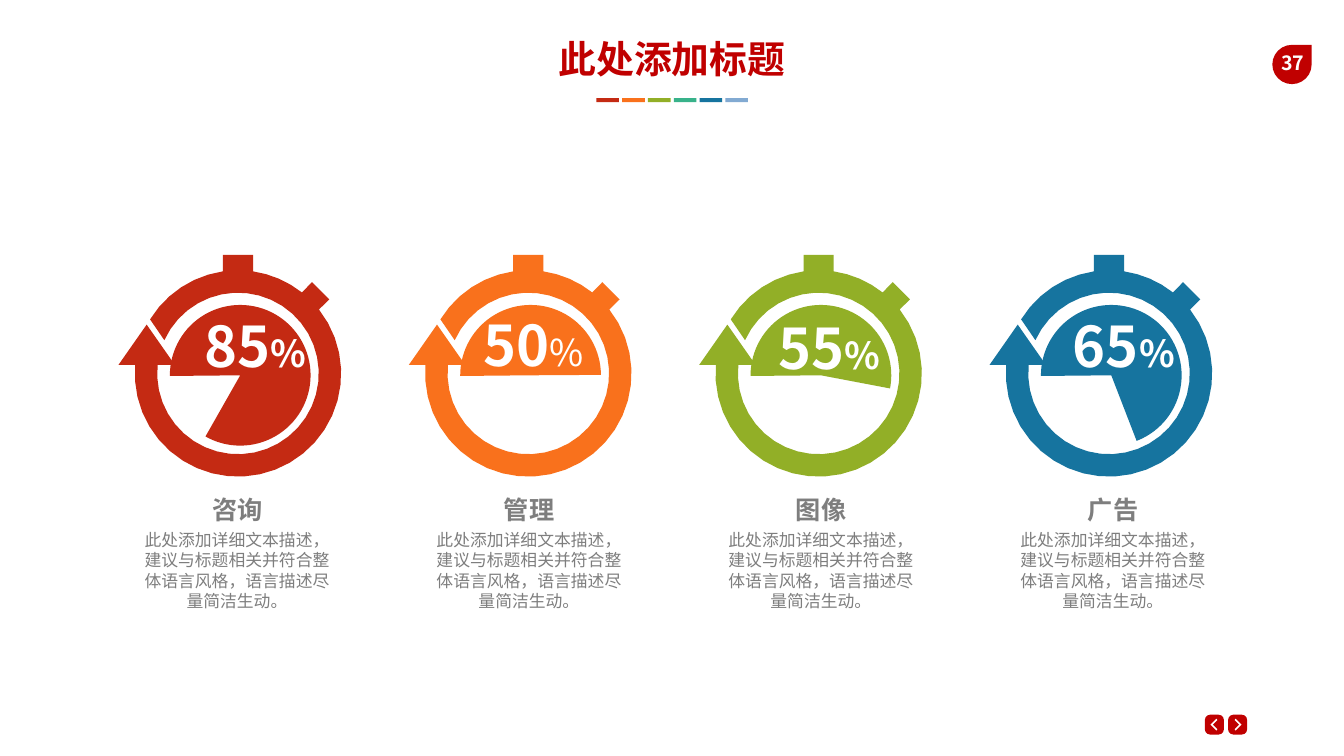
"""Build a slide of four stopwatch dials with percentages and captions."""
from dataclasses import dataclass
from math import ceil, cos, radians, sin

from pptx import Presentation
from pptx.dml.color import RGBColor
from pptx.enum.shapes import MSO_SHAPE
from pptx.enum.text import MSO_ANCHOR, PP_ALIGN
from pptx.util import Cm, Pt


@dataclass(frozen=True)
class Theme:
    """Colours, font and type sizes of the slide."""

    font: str = "Noto Sans CJK SC"
    accent: str = "C00000"
    white: str = "FFFFFF"
    grey: str = "7E7E7E"
    red: str = "C42A13"
    orange: str = "F9711C"
    green: str = "92AF27"
    teal: str = "38B28A"
    blue: str = "16749F"
    light_blue: str = "82AAD2"
    title: int = 54
    page_number: int = 28
    value: int = 80
    percent: int = 53
    heading: int = 36
    body: int = 24
    line_height: float = 1.21


THEME = Theme()
BODY = "此处添加详细文本描述，建议与标题相关并符合整体语言风格，语言描述尽量简洁生动。"
DIALS = [
    ("咨询", "85", THEME.red, 119.58, (0.90, 0), True),
    ("管理", "50", THEME.orange, 359.66, (0.27, -0.05), False),
    ("图像", "55", THEME.green, 10.78, (0.52, 0.10), True),
    ("广告", "65", THEME.blue, 68.86, (0.75, 0), True),
]
DIAL_X, DIAL_Y, DIAL_STEP = 11.99, 18.82, 14.63
CAPTION_STEP = 14.71
OUTER_RADIUS, INNER_RADIUS = 5.2, 4.07
ARC_STEP = 9
WIDE_INSETS = (0.51, 0.25)


def apply_format(target, values):
    """Set each named attribute on the target."""
    for name, value in values.items():
        setattr(target, name, value)


def paint(shape, color):
    """Give a shape a plain fill without line or shadow."""
    shape.shadow.inherit = False
    shape.fill.solid()
    shape.fill.fore_color.rgb = RGBColor.from_string(color)
    shape.line.fill.background()


def add_preset(slide, kind, box, color):
    """Add a filled preset shape."""
    shape = slide.shapes.add_shape(kind, *map(Cm, box))
    paint(shape, color)
    return shape


def add_outline(slide, center, points, color):
    """Add a filled closed outline around a center."""
    corners = [(Cm(center[0] + x), Cm(center[1] + y)) for x, y in points]
    builder = slide.shapes.build_freeform(*corners[0])
    builder.add_line_segments(corners[1:], close=True)
    paint(builder.convert_to_shape(), color)


def add_text(slide, box, runs, color, insets=(0.25, 0.13), frame_format=None,
             paragraph_format=None):
    """Add a centred paragraph from (text, size, bold) runs."""
    frame = slide.shapes.add_textbox(*map(Cm, box)).text_frame
    side, edge = map(Cm, insets)
    apply_format(frame, {
        "word_wrap": True, "margin_left": side, "margin_right": side,
        "margin_top": edge, "margin_bottom": edge, **(frame_format or {}),
    })
    paragraph = frame.paragraphs[0]
    apply_format(paragraph, {"alignment": PP_ALIGN.CENTER, **(paragraph_format or {})})
    for text, size, bold in runs:
        run = paragraph.add_run()
        run.text = text
        apply_format(run.font, {"name": THEME.font, "size": Pt(size), "bold": bold})
        run.font.color.rgb = RGBColor.from_string(color)


def add_label(slide, box, text, size, color, bold=True, wrap=True, insets=WIDE_INSETS):
    """Add a text of one style with tight line spacing."""
    add_text(slide, box, [(text, size, bold)], color, insets, {"word_wrap": wrap},
             {"line_spacing": Pt(size * THEME.line_height)})


def arc(radius, start, end):
    """Return evenly spaced points along a circle between two angles."""
    steps = ceil(abs(end - start) / ARC_STEP)
    angles = [radians(start + (end - start) * step / steps) for step in range(steps + 1)]
    return [(radius * cos(angle), radius * sin(angle)) for angle in angles]


def stopwatch_points():
    """Return the outline of a stopwatch ring with buttons and an arrow."""
    return [
        (4.6, -3.73), (3.73, -4.6),
        *arc(OUTER_RADIUS, -51.7, -81.6),
        (0.76, -5.97), (-0.76, -5.97),
        *arc(OUTER_RADIUS, -98.4, -148.4),
        *arc(INNER_RADIUS, -155.7, 186.1),
        (-3.18, -0.43), (-4.6, -2.46), (-6.02, -0.43),
        *arc(OUTER_RADIUS, 184.8, -38.3),
    ]


def add_dial(slide, center_x, value, color, end_angle, shift, percent_bold):
    """Add a stopwatch with its pie and percentage."""
    add_outline(slide, (center_x, DIAL_Y), stopwatch_points(), color)
    pie = add_preset(slide, MSO_SHAPE.PIE, (center_x - 3.43, 15.37, 7.09, 7.09), color)
    for index, angle in enumerate((179.44, end_angle)):
        pie.adjustments[index] = angle * 0.6
    width, height = 6.02, 3.63
    box = (center_x + shift[0] - width / 2, 17.39 + shift[1] - height / 2, width, height)
    runs = [(value, THEME.value, True), ("%", THEME.percent, percent_bold)]
    add_text(slide, box, runs, THEME.white, (0, 0),
             {"vertical_anchor": MSO_ANCHOR.MIDDLE}, {"space_after": Pt(8)})


def add_caption(slide, left, heading):
    """Add a heading and its description."""
    add_label(slide, (left + 0.33, 26.44, 10.36, 4.62), BODY, THEME.body, THEME.grey, False)
    add_label(slide, (left, 24.64, 11.05, 2.06), heading, THEME.heading, THEME.grey)


def add_navigation(slide):
    """Add the previous and next buttons."""
    chevron = [(-0.2, 0), (0.1, -0.3), (0.15, -0.23), (-0.08, 0), (0.15, 0.23), (0.1, 0.3)]
    center_y = 36.52
    for center_x, direction in ((61.19, 1), (62.36, -1)):
        box = (center_x - 0.48, center_y - 0.5, 0.96, 1)
        button = add_preset(slide, MSO_SHAPE.ROUNDED_RECTANGLE, box, THEME.accent)
        button.adjustments[0] = 0.28
        points = [(x * direction, y) for x, y in chevron]
        add_outline(slide, (center_x, center_y), points, THEME.white)


def add_page_number(slide):
    """Add the page number on its teardrop."""
    add_preset(slide, MSO_SHAPE.TEAR, (64.11, 2.26, 1.98, 1.98), THEME.accent)
    add_label(slide, (63.91, 2.29, 2.46, 1.7), "37", THEME.page_number, THEME.white,
              wrap=False)


def add_title(slide):
    """Add the title and the coloured bars below it."""
    add_label(slide, (16.69, 1.65, 34.34, 2.57), "此处添加标题", THEME.title, THEME.accent,
              insets=(0.25, 0.13))
    colors = (THEME.red, THEME.orange, THEME.green, THEME.teal, THEME.blue, THEME.light_blue)
    for index, color in enumerate(colors):
        add_preset(slide, MSO_SHAPE.RECTANGLE, (30.05 + index * 1.3, 4.95, 1.14, 0.2), color)


def main():
    """Build and save the presentation."""
    presentation = Presentation()
    apply_format(presentation, {"slide_width": Cm(67.72), "slide_height": Cm(38.1)})
    slide = presentation.slides.add_slide(presentation.slide_layouts[6])
    add_navigation(slide)
    add_page_number(slide)
    for index, (heading, *dial) in enumerate(DIALS):
        add_dial(slide, DIAL_X + index * DIAL_STEP, *dial)
        add_caption(slide, 6.43 + index * CAPTION_STEP, heading)
    add_title(slide)
    presentation.save("out.pptx")


if __name__ == "__main__":
    main()
